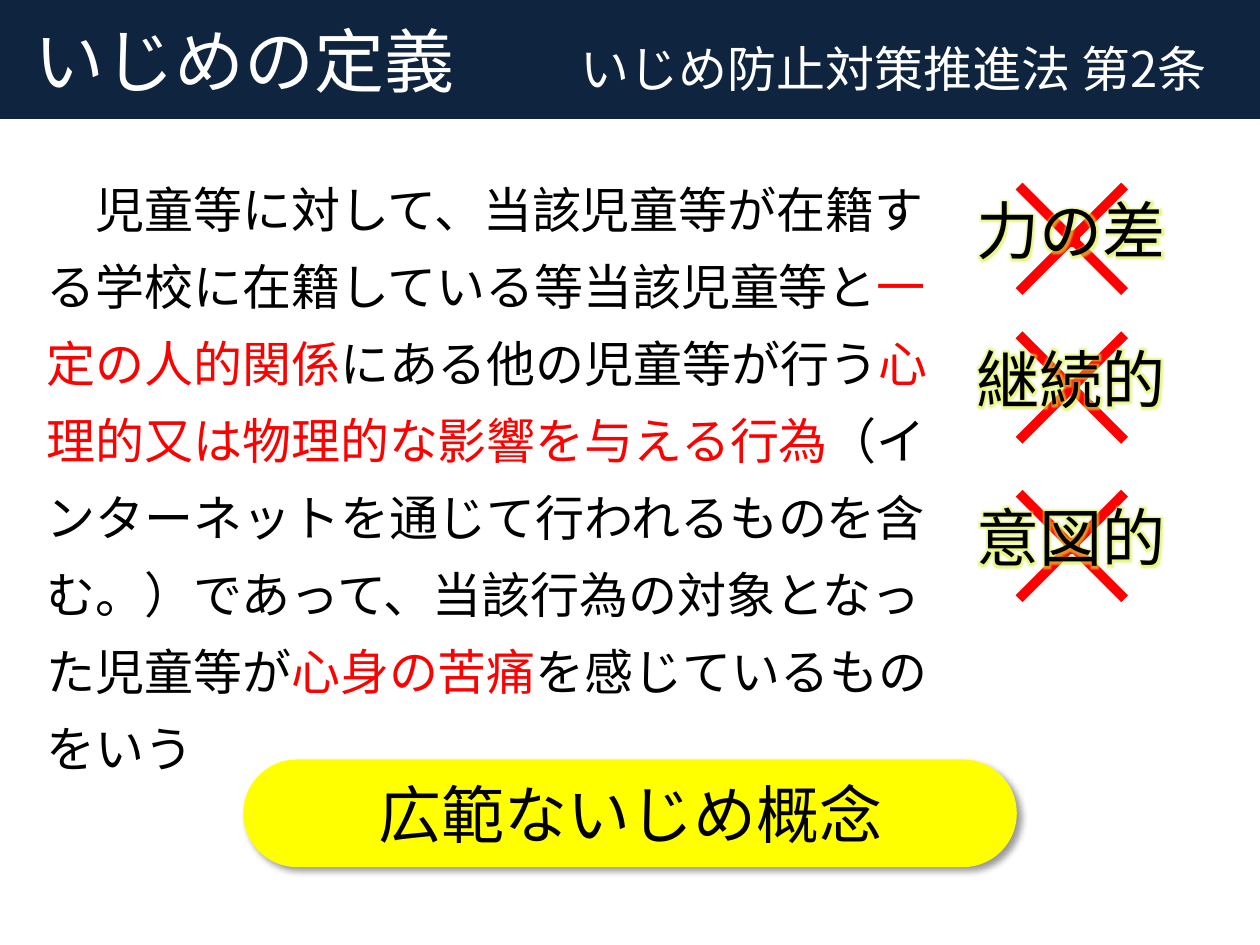
from lxml.etree import SubElement
from pptx import Presentation
from pptx.dml.color import RGBColor
from pptx.enum.shapes import MSO_SHAPE as Kind
from pptx.enum.text import MSO_ANCHOR as Anchor, MSO_AUTO_SIZE as Fit, PP_ALIGN as Align
from pptx.oxml import parse_xml
from pptx.oxml.ns import nsdecls, qn
from pptx.util import Pt

FONT = "Noto Sans CJK JP"
BLACK = RGBColor(0, 0, 0)
WHITE = RGBColor(255, 255, 255)
RED = RGBColor(255, 0, 0)
YELLOW = RGBColor(255, 255, 0)
NAVY = RGBColor(0x0F, 0x24, 0x3E)

BODY = [
    ("児童等に対して、当該児童等が在籍する学校に在籍している等当該児童等と", BLACK),
    ("一定の人的関係", RED),
    ("にある他の児童等が行う", BLACK),
    ("心理的又は物理的な影響を与える行為", RED),
    ("（インターネットを通じて行われるものを含む。）であって、当該行為の対象となった児童等が", BLACK),
    ("心身の苦痛", RED),
    ("を感じているものをいう", BLACK),
]
LABELS = [("力の差", 106), ("継続的", 191), ("意図的", 281.5)]


def effect(xml):
    return parse_xml(f"<a:effectLst {nsdecls('a')}>{xml}</a:effectLst>")


def write(para, text, size=28, color=BLACK, glow=False):
    run = para.add_run()
    run.text = text
    run.font.size = Pt(size)
    run.font.color.rgb = color
    run.font.name = FONT
    props = run.font._element
    latin = props.find(qn("a:latin"))
    if glow:
        latin.addprevious(effect(
            f'<a:glow rad="{Pt(5)}"><a:srgbClr val="D9F03A">'
            '<a:alpha val="60000"/></a:srgbClr></a:glow>'))
    east = parse_xml(f'<a:ea {nsdecls("a")} typeface="{FONT}"/>')
    latin.addnext(east)


def add_form(slide, kind, box, fill):
    form = slide.shapes.add_shape(kind, *map(Pt, box))
    form.shadow.inherit = False
    form.fill.solid()
    form.fill.fore_color.rgb = fill
    form.line.fill.background()
    form.text_frame.vertical_anchor = Anchor.MIDDLE
    return form


def add_text(slide, box):
    frame = slide.shapes.add_textbox(*map(Pt, box)).text_frame
    frame.word_wrap = True
    frame.auto_size = Fit.SHAPE_TO_FIT_TEXT
    return frame.paragraphs[0]


def add_cross(slide, top):
    cross = add_form(slide, Kind.MATH_MULTIPLY, (553, top, 119, 119), RED)
    cross.adjustments[0] = 0.065
    cross.line.color.rgb = WHITE
    cross.line.width = Pt(2)


def add_label(slide, text, top):
    para = add_text(slide, (518.4, top, 187.2, 51))
    para.alignment = Align.CENTER
    write(para, text, size=36, glow=True)


def add_body(slide):
    para = add_text(slide, (19.5, 88.5, 527, 363))
    para.line_spacing = Pt(44)
    para._p.get_or_add_pPr().set("indent", str(Pt(28)))
    for text, color in BODY:
        write(para, text, color=color)


def add_pill(slide):
    pill = add_form(slide, Kind.ROUNDED_RECTANGLE, (139, 434, 442, 61.5), YELLOW)
    pill.adjustments[0] = 0.5
    props = pill._element.spPr
    props.replace(props.find(qn("a:effectLst")), effect(
        f'<a:outerShdw blurRad="{Pt(4)}" dist="{Pt(3)}" dir="2700000" algn="tl" rotWithShape="0">'
        '<a:srgbClr val="000000"><a:alpha val="40000"/></a:srgbClr></a:outerShdw>'))
    frame = pill.text_frame
    frame.margin_top = frame.margin_bottom = 0
    para = frame.paragraphs[0]
    para.alignment = Align.CENTER
    write(para, "広範ないじめ概念", size=36)


def add_title(slide):
    frame = add_form(slide, Kind.RECTANGLE, (0, 0, 720, 68), NAVY).text_frame
    frame.margin_left, frame.margin_right = Pt(20), 0
    para = frame.paragraphs[0]
    para.alignment = Align.LEFT
    # The tab stop sets the law's name apart from the heading
    tabs = SubElement(para._p.get_or_add_pPr(), qn("a:tabLst"))
    SubElement(tabs, qn("a:tab"), pos=str(Pt(312)), algn="l")
    write(para, "いじめの定義\t", size=40, color=WHITE)
    write(para, "いじめ防止対策推進法 第2条", color=WHITE)


def main():
    deck = Presentation()
    deck.slide_width, deck.slide_height = Pt(720), Pt(540)
    slide = deck.slides.add_slide(deck.slide_layouts[6])

    # Rejected criteria: crosses lie behind their labels
    for _, top in LABELS:
        add_cross(slide, top - 29)
    add_body(slide)
    for text, top in LABELS:
        add_label(slide, text, top)

    # Conclusion and heading
    add_pill(slide)
    add_title(slide)
    deck.save("out.pptx")


if __name__ == "__main__":
    main()
